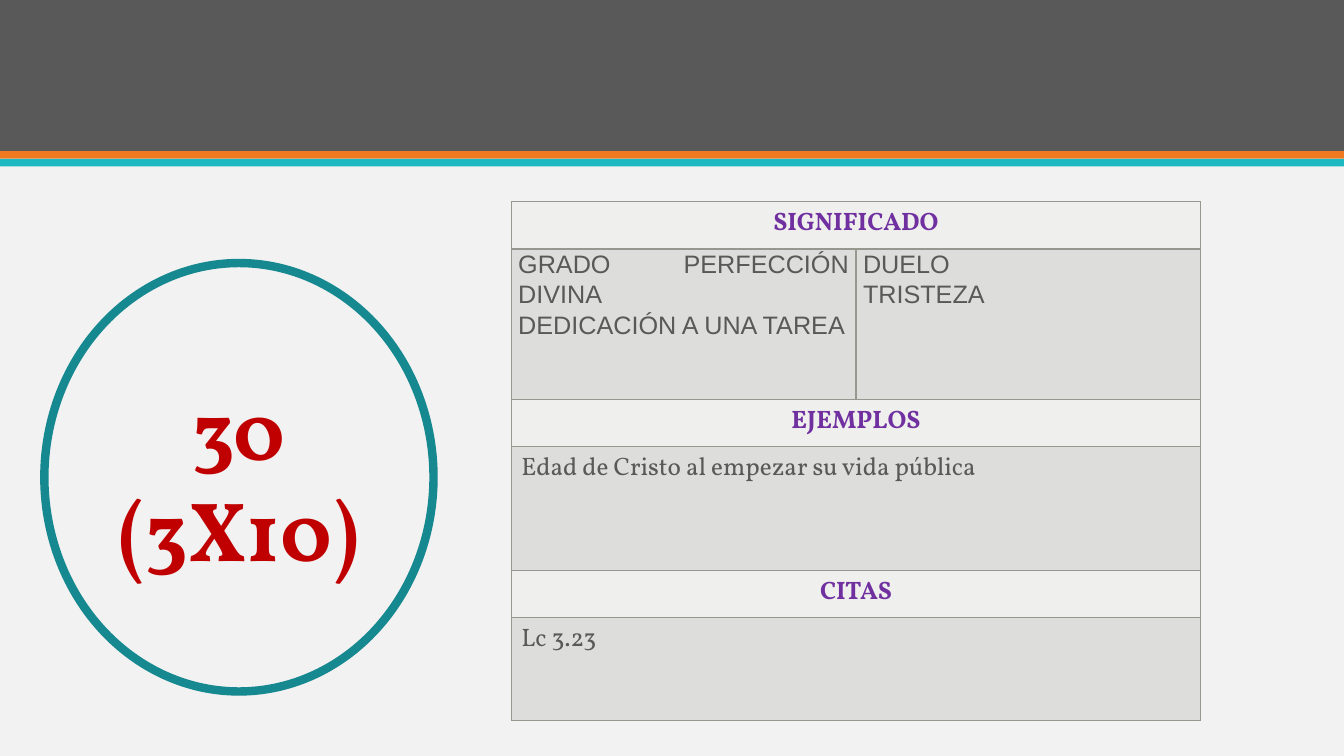
from lxml import etree
from pptx import Presentation
from pptx import util as u
from pptx.dml.color import RGBColor
from pptx.enum import shapes, text
from pptx.oxml import ns

W, H = u.Inches(13.33), u.Inches(7.5)

GRAY = RGBColor(0x59, 0x59, 0x59)
ORANGE = RGBColor(0xEF, 0x79, 0x20)
TURQUOISE = RGBColor(0x1E, 0xB8, 0xC1)
TEAL = RGBColor(0x16, 0x88, 0x8F)
RED = RGBColor(0xC0, 0x00, 0x00)
PURPLE = RGBColor(0x70, 0x30, 0xA0)
PAPER = RGBColor(0xF2, 0xF2, 0xF2)
HEADING_FILL = RGBColor(0xEF, 0xEF, 0xEE)
BODY_FILL = RGBColor(0xDD, 0xDD, 0xDB)
BORDER = RGBColor(0x96, 0x98, 0x90)

# Each row: height in inches and its cell texts; one text spans both columns
HEADING_HEIGHT = 0.47
ROWS = [
    (HEADING_HEIGHT, ["SIGNIFICADO"]),
    (1.49, ["GRADO PERFECCIÓN DIVINA\nDEDICACIÓN A UNA TAREA", "DUELO\nTRISTEZA"]),
    (HEADING_HEIGHT, ["EJEMPLOS"]),
    (1.23, ["Edad de Cristo al empezar su vida pública"]),
    (HEADING_HEIGHT, ["CITAS"]),
    (1.02, ["Lc 3.23"]),
]


def write(tf, words, size=18, font="Vollkorn", color=GRAY, bold=False,
          align=text.PP_ALIGN.LEFT, spacing=None):
    """Fill a text frame, one paragraph per line of words."""
    tf.word_wrap = True
    for i, line in enumerate(words.split("\n")):
        p = tf.paragraphs[0] if i == 0 else tf.add_paragraph()
        p.alignment = align
        p.line_spacing = spacing
        r = p.add_run()
        r.text = line
        r.font.size = u.Pt(size)
        r.font.name = font
        r.font.bold = bold
        r.font.color.rgb = color


def add_band(s, top, height, color):
    """Full-width stripe, placed by shares of the slide height."""
    sp = s.shapes.add_shape(shapes.MSO_SHAPE.RECTANGLE, 0, int(H * top), W, int(H * height))
    sp.shadow.inherit = False
    sp.fill.solid()
    sp.fill.fore_color.rgb = color
    sp.line.fill.background()


def add_number_ring(s, words):
    sp = s.shapes.add_shape(shapes.MSO_SHAPE.OVAL, u.Inches(0.44), u.Inches(2.61),
                            u.Inches(3.86), u.Inches(4.25))
    sp.shadow.inherit = False
    sp.fill.background()
    sp.line.color.rgb = TEAL
    sp.line.width = u.Pt(6)
    sp.text_frame.vertical_anchor = text.MSO_ANCHOR.MIDDLE
    write(sp.text_frame, words, size=60, color=RED, bold=True, align=text.PP_ALIGN.CENTER)


def style_cell(cell, color):
    """Solid fill and a thin border on all four sides."""
    tc_pr = cell._tc.get_or_add_tcPr()
    for side in ("a:lnL", "a:lnR", "a:lnT", "a:lnB"):
        ln = etree.SubElement(tc_pr, ns.qn(side), w=str(u.Pt(1)))
        fill = etree.SubElement(ln, ns.qn("a:solidFill"))
        etree.SubElement(fill, ns.qn("a:srgbClr"), val=str(BORDER))
    cell.fill.solid()
    cell.fill.fore_color.rgb = color


def add_meaning_table(s):
    height = sum(h for h, _ in ROWS)
    table = s.shapes.add_table(len(ROWS), 2, u.Inches(5.07), u.Inches(2),
                               u.Inches(6.84), u.Inches(height)).table
    for i, (row_height, words) in enumerate(ROWS):
        table.rows[i].height = u.Inches(row_height)
        heading = i % 2 == 0
        for cell in table.rows[i].cells:
            style_cell(cell, HEADING_FILL if heading else BODY_FILL)
        if len(words) == 1:
            table.cell(i, 0).merge(table.cell(i, 1))
        for j, content in enumerate(words):
            cell = table.cell(i, j)
            if heading:
                write(cell.text_frame, content, color=PURPLE, bold=True,
                      align=text.PP_ALIGN.CENTER)
            elif len(words) == 2:
                cell.margin_left = cell.margin_right = u.Inches(0.07)
                cell.margin_top = cell.margin_bottom = 0
                write(cell.text_frame, content, font="Arial",
                      align=text.PP_ALIGN.JUSTIFY, spacing=1.07)
            else:
                write(cell.text_frame, content)


def main():
    prs = Presentation()
    prs.slide_width, prs.slide_height = W, H
    s = prs.slides.add_slide(prs.slide_layouts[6])
    s.background.fill.solid()
    s.background.fill.fore_color.rgb = PAPER

    # Header bands
    add_band(s, 0, 0.2, GRAY)
    add_band(s, 0.2, 0.01, ORANGE)
    add_band(s, 0.21, 0.01, TURQUOISE)

    # Number and its meaning
    add_number_ring(s, "30\n(3X10)")
    add_meaning_table(s)
    prs.save("out.pptx")


if __name__ == "__main__":
    main()
